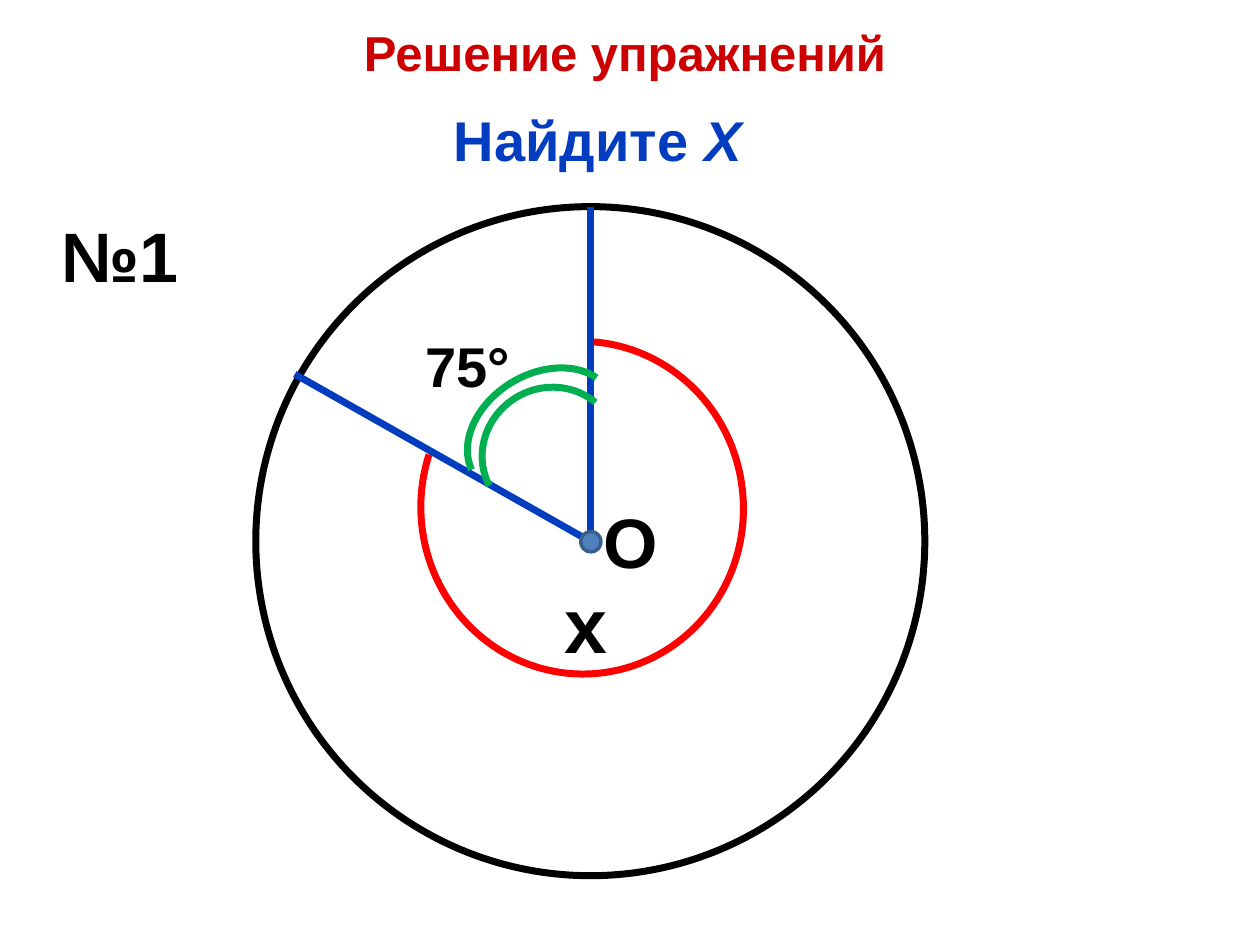
from lxml import etree
from pptx import Presentation
from pptx import util as u
from pptx.dml.color import RGBColor
from pptx.enum import shapes, text
from pptx.oxml.ns import qn

COLORS = {
    "title": "CC0000",
    "blue": "033DBF",
    "black": "000000",
    "white": "FFFFFF",
    "red": "FF0000",
    "green": "00B050",
    "center": "4F81BD",
    "center_line": "3A5F8C",
}

presentation = Presentation()
presentation.slide_width = u.Inches(10)
presentation.slide_height = u.Inches(7.5)
slide = presentation.slides.add_slide(presentation.slide_layouts[6])


def add_text(content, box, size, color="black", wrap=True, italic_tail="",
             align=text.PP_ALIGN.LEFT, anchor=text.MSO_ANCHOR.TOP):
    frame = slide.shapes.add_textbox(*map(u.Inches, box)).text_frame
    frame.word_wrap = wrap
    frame.vertical_anchor = anchor
    paragraph = frame.paragraphs[0]
    paragraph.alignment = align
    for words, italic in ((content, False), (italic_tail, True)):
        if words:
            run = paragraph.add_run()
            run.text = words
            run.font.name = "Arial"
            run.font.size = u.Pt(size)
            run.font.bold = True
            run.font.italic = italic
            run.font.color.rgb = RGBColor.from_string(COLORS[color])


def add_outlined(kind, box, line, width=4, fill=None):
    shape = slide.shapes.add_shape(kind, *map(u.Inches, box))
    shape.shadow.inherit = False
    if fill:
        shape.fill.solid()
        shape.fill.fore_color.rgb = RGBColor.from_string(COLORS[fill])
    else:
        shape.fill.background()
    shape.line.color.rgb = RGBColor.from_string(COLORS[line])
    shape.line.width = u.Pt(width)
    return shape


add_text("Найдите ", (0.66, 0.7, 8.17, 0.81), 32, color="blue", italic_tail="Х",
         align=text.PP_ALIGN.CENTER, anchor=text.MSO_ANCHOR.MIDDLE)

center_x, center_y = 4.69, 4.3
add_outlined(shapes.MSO_SHAPE.OVAL, (2.03, 1.64, 5.31, 5.31), "black", fill="white")

for end_x, end_y in ((4.69, 1.64), (2.34, 2.97)):
    radius = slide.shapes.add_connector(
        shapes.MSO_CONNECTOR.STRAIGHT,
        *map(u.Inches, (center_x, center_y, end_x, end_y)))
    radius.line.color.rgb = RGBColor.from_string(COLORS["blue"])
    radius.line.width = u.Pt(4)
    etree.SubElement(radius._element.spPr, qn("a:effectLst"))

arcs = (
    ((3.3, 2.75, 2.64, 2.56), 84.9, (113.52, 68.55), "red"),
    ((3.67, 2.97, 1.26, 0.93), 328.6, (110.16, 207.78), "green"),
    ((3.82, 3.08, 1.09, 1.04), 328.6, (110.16, 205.79), "green"),
)
for box, rotation, (start, end), color in arcs:
    arc = add_outlined(shapes.MSO_SHAPE.ARC, box, color)
    arc.rotation = rotation
    arc.adjustments[0] = start
    arc.adjustments[1] = end

add_text("№1", (0.39, 1.64, 1.17, 0.77), 40)
add_text("75°", (3.28, 2.58, 0.94, 0.64), 32)
add_text("x", (4.38, 4.53, 0.47, 0.84), 44)
add_text("О", (4.69, 3.91, 0.64, 0.77), 40, wrap=False)

add_outlined(shapes.MSO_SHAPE.OVAL, (center_x - 0.08, center_y - 0.08, 0.16, 0.16),
             "center_line", width=2, fill="center")
add_text("Решение упражнений", (2.79, 0.13, 6.46, 0.57), 28, color="title")

presentation.save("out.pptx")
